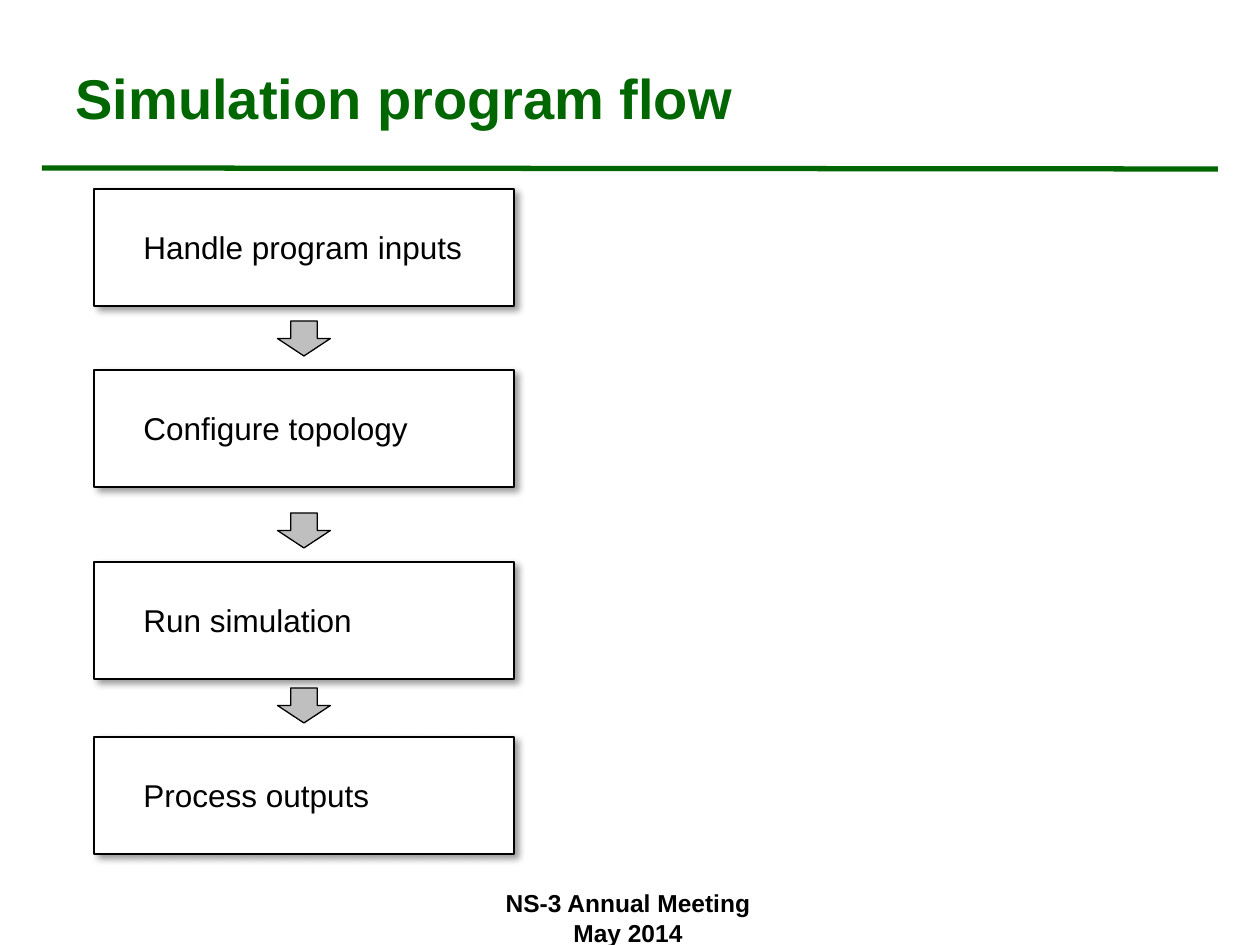
"""Build the simulation program flow slide."""
from lxml import etree
from pptx import Presentation
from pptx import util as u
from pptx.dml.color import RGBColor
from pptx.enum import shapes, text
from pptx.oxml import ns

PX = 914400 / 126
GREEN = RGBColor(0x00, 0x66, 0x00)
BLACK = RGBColor(0x00, 0x00, 0x00)
WHITE = RGBColor(0xFF, 0xFF, 0xFF)
GRAY = RGBColor(0xBF, 0xBF, 0xBF)

STEPS = [
    ("Handle program inputs", 189, 347),
    ("Configure topology", 370, 292),
    ("Run simulation", 562, 236),
    ("Process outputs", 737, 253),
]
STEP_LEFT, STEP_WIDTH, STEP_HEIGHT = 94, 420, 117
ARROW_WIDTH, ARROW_HEIGHT, ARROW_RISE = 53, 35, 49


def emu(*lengths):
    return [u.Emu(round(length * PX)) for length in lengths]


def write(frame, content, size, color, bold=False, align=text.PP_ALIGN.LEFT):
    frame.text = content
    for para in frame.paragraphs:
        para.alignment = align
        for span in para.runs:
            span.font.name = "Arial"
            span.font.size = u.Pt(size)
            span.font.bold = bold
            span.font.color.rgb = color


deck = Presentation()
deck.slide_width, deck.slide_height = emu(1260, 945)
page = deck.slides.add_slide(deck.slide_layouts[5])
page.background.fill.solid()
page.background.fill.fore_color.rgb = WHITE

rule = page.shapes.add_connector(shapes.MSO_CONNECTOR.STRAIGHT, *emu(42, 168, 1218, 169))
rule.line.color.rgb = GREEN
rule.line.width = u.Pt(3)
etree.SubElement(rule._element.spPr, ns.qn("a:effectLst"))

title = page.shapes.title
title.left, title.top, title.width, title.height = emu(63, 38, 1130, 118)
title.text_frame.vertical_anchor = text.MSO_ANCHOR.MIDDLE
title.text_frame.auto_size = text.MSO_AUTO_SIZE.NONE
write(title.text_frame, "Simulation program flow", 32, GREEN, bold=True)

footer = page.shapes.add_textbox(*emu(431, 882, 394, 63))
footer.text_frame.word_wrap = True
write(footer.text_frame, "NS-3 Annual Meeting\nMay 2014", 14, BLACK, bold=True,
      align=text.PP_ALIGN.CENTER)

for index, (name, top, label_width) in enumerate(STEPS):
    box = page.shapes.add_shape(shapes.MSO_SHAPE.RECTANGLE,
                                *emu(STEP_LEFT, top, STEP_WIDTH, STEP_HEIGHT))
    box.fill.solid()
    box.fill.fore_color.rgb = WHITE
    box.line.color.rgb = BLACK
    box.line.width = u.Pt(0.75)
    box.shadow.inherit = False
    effects = box._element.spPr.find(ns.qn("a:effectLst"))
    shadow = etree.SubElement(effects, ns.qn("a:outerShdw"), blurRad=str(u.Pt(4)),
                              dist=str(u.Pt(3)), dir="2700000", algn="tl", rotWithShape="0")
    shade = etree.SubElement(shadow, ns.qn("a:srgbClr"), val=str(BLACK))
    etree.SubElement(shade, ns.qn("a:alpha"), val="40000")

    label = page.shapes.add_textbox(*emu(131, top + 33, label_width, 50))
    label.text_frame.word_wrap = False
    label.text_frame.auto_size = text.MSO_AUTO_SIZE.SHAPE_TO_FIT_TEXT
    write(label.text_frame, name, 18, BLACK)

    if index:
        arrow_left = STEP_LEFT + (STEP_WIDTH - ARROW_WIDTH) / 2
        arrow = page.shapes.add_shape(
            shapes.MSO_SHAPE.DOWN_ARROW,
            *emu(arrow_left, top - ARROW_RISE, ARROW_WIDTH, ARROW_HEIGHT))
        arrow.fill.solid()
        arrow.fill.fore_color.rgb = GRAY
        arrow.line.color.rgb = BLACK
        arrow.line.width = u.Pt(0.75)
        arrow.shadow.inherit = False

deck.save("out.pptx")
